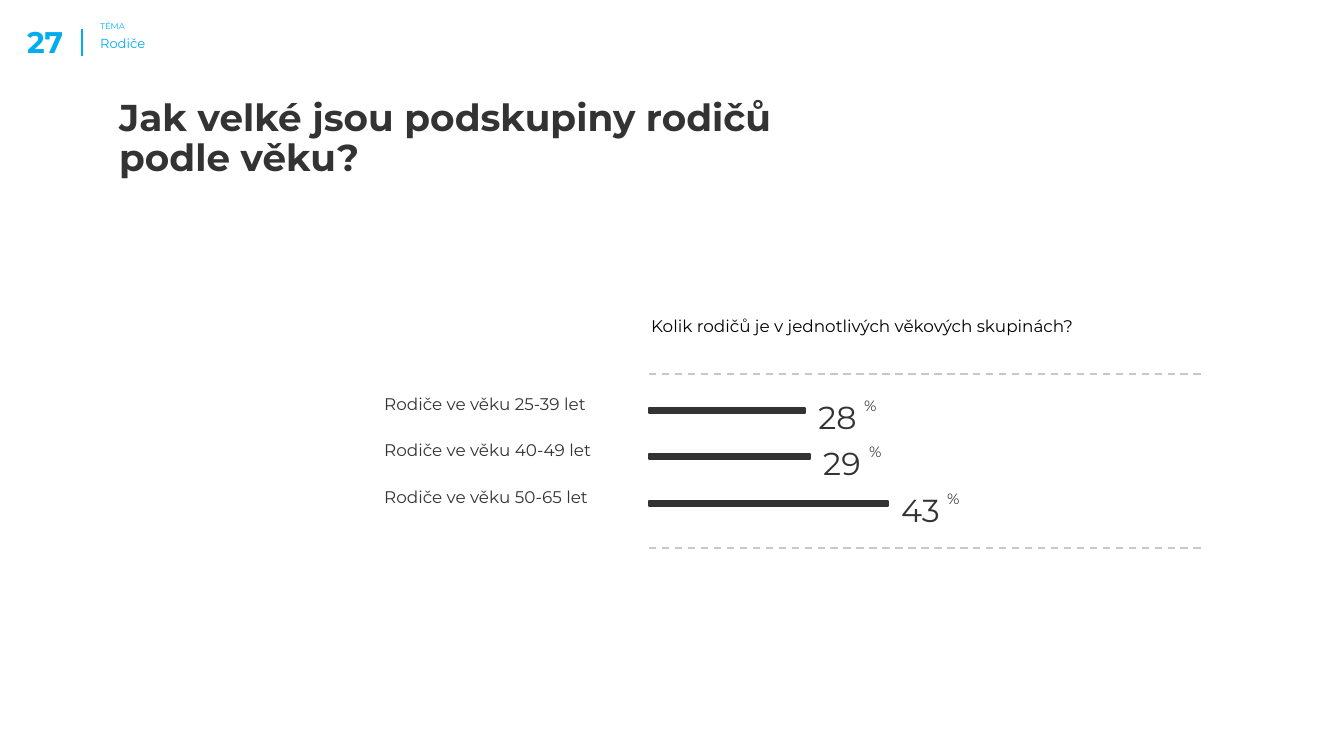
"""Build the slide on the age subgroups of parents."""
from lxml import etree
from pptx import Presentation
from pptx import util as u
from pptx.dml.color import RGBColor
from pptx.enum import dml, shapes, text

PX = 914400 / 134.4
BLUE, DARK, BLACK, GREY = "00AEEF", "333333", "000000", "C8C8C8"
A = "http://schemas.openxmlformats.org/drawingml/2006/main"


def add_text(box, words, size, color, bold=False, spacing=None, align=None, **frame):
    tf = s.shapes.add_textbox(*[round(v * PX) for v in box]).text_frame
    margins = dict.fromkeys(("margin_left", "margin_top", "margin_right", "margin_bottom"), u.Inches(0.1))
    for name, value in {"word_wrap": True, **margins, **frame}.items():
        setattr(tf, name, value)
    p = tf.paragraphs[0]
    p.text, p.line_spacing, p.alignment = words, spacing, align
    for r in p.runs:
        for name, value in {"name": "Montserrat", "size": u.Pt(size), "bold": bold}.items():
            setattr(r.font, name, value)
        r.font.color.rgb = RGBColor.from_string(color)


def add_line(x1, y1, x2, y2, color, width, dash=None):
    ends = [round(v * PX) for v in (x1, y1, x2, y2)]
    c = s.shapes.add_connector(shapes.MSO_CONNECTOR.STRAIGHT, *ends)
    c.line.color.rgb = RGBColor.from_string(color)
    c.line.width = u.Pt(width)
    c.line.dash_style = dash
    etree.SubElement(c._element.spPr, f"{{{A}}}effectLst")


prs = Presentation()
prs.slide_width, prs.slide_height = round(1344 * PX), round(756 * PX)
s = prs.slides.add_slide(prs.slide_layouts[6])

add_line(82, 29, 82, 56, BLUE, 0.75)
add_text((0, 0, 63, 60), "27", 16, BLUE, bold=True, align=text.PP_ALIGN.RIGHT,
         vertical_anchor=text.MSO_ANCHOR.BOTTOM, margin_right=0, margin_bottom=0)
add_text((87, 16, 85, 56), "TÉMA", 4.5, BLUE)
add_text((87, 28, 101, 39), "Rodiče", 7, BLUE)
add_text((106, 86, 884, 67), "Jak velké jsou podskupiny rodičů\vpodle věku?", 20, DARK, bold=True, spacing=0.9)
add_text((638, 306, 585, 47), "Kolik rodičů je v jednotlivých věkových skupinách?", 9, BLACK)

for y in (374, 548):
    add_line(649, y, 1206, y, GREY, 1, dml.MSO_LINE.DASH)

for i, (ages, share) in enumerate([("25-39", 28), ("40-49", 29), ("50-65", 43)]):
    y = 384 + i * 93 // 2
    width = round(share * 5.56)
    end = 649 + width
    add_text((371, y, 270, 43), f"Rodiče ve věku {ages} let", 9, DARK)
    sp = s.shapes.add_shape(shapes.MSO_SHAPE.RECTANGLE, *[round(v * PX) for v in (649, y + 24, width, 5)])
    sp.shadow.inherit = False
    sp.fill.solid()
    sp.fill.fore_color.rgb = sp.line.color.rgb = RGBColor.from_string(DARK)
    sp.line.width = u.Pt(1)
    add_text((end, y, 92, 51), str(share), 17, DARK)
    add_text((end + 46, y + 4, 62, 39), "%", 8, DARK)

prs.save("out.pptx")
